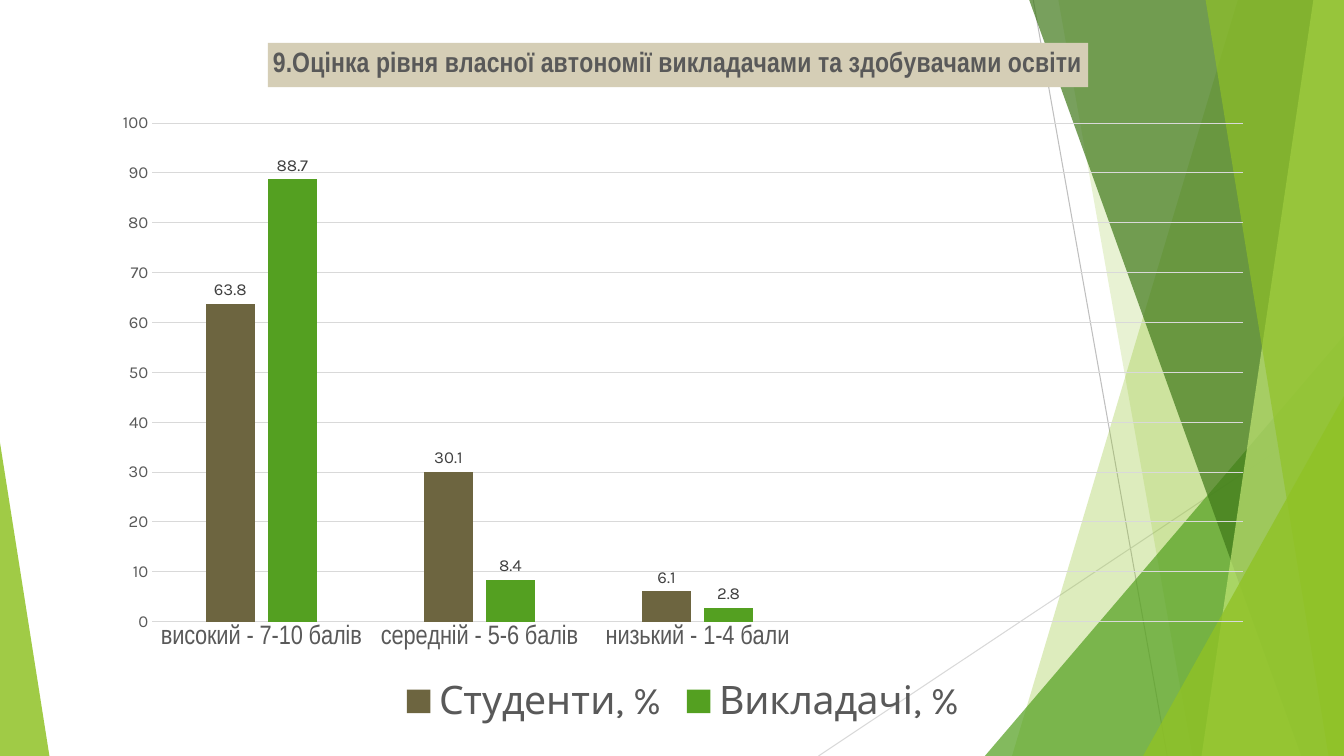
import lxml.etree
import pptx
import pptx.chart.data
import pptx.dml.color
import pptx.enum.chart
import pptx.enum.shapes
import pptx.oxml.ns
import pptx.util

qn = pptx.oxml.ns.qn
SHAPE = pptx.enum.shapes.MSO_SHAPE
CHART = pptx.enum.chart

THEME = {
    "lime": "90C226", "green": "54A021", "forest": "3F7819", "pale": "C0E474",
    "olive": "6D6540", "sand": "D5CEB6", "grid": "D9D9D9", "ray": "BFBFBF",
    "text": "595959", "value": "404040",
    "narrow": "Arial Narrow", "body": "Karla",
    "title_size": 20, "category_size": 19, "number_size": 12, "legend_size": 28,
    "hairline": 0.75,
}

# Facets from back to front, in percent of the slide.
# blade: left edge at top and bottom; corner: left, top, width, apex side
FACETS = [
    ("blade", (92.1, 75.3), "lime", 30),
    ("blade", (78.75, 88.72), "lime", 20),
    ("corner", (73.28, 44.4, 26.72, 1), "green", 72),
    ("blade", (76.58, 96.82), "forest", 70),
    ("blade", (97.72, 89.4), "pale", 70),
    ("blade", (89.7, 98.85), "lime", 65),
    ("corner", (85.05, 52.4, 14.95, 1), "lime", 80),
    ("corner", (0, 58.53, 3.68, 0), "lime", 85),
]
RAYS = [((76.88, 0), (86.85, 100), "ray"), ((100, 53.73), (60.9, 100), "grid")]
CHART_AREA = (7.43, 4.67, 86.78, 92.13)

CATEGORIES = ["високий - 7-10 балів", "середній - 5-6 балів", "низький - 1-4 бали", "", ""]
SERIES = [
    ("Студенти, %", (63.8, 30.1, 6.1, None, None), "olive"),
    ("Викладачі, %", (88.7, 8.4, 2.8, None, None), "green"),
]
TITLE = "9.Оцінка рівня власної автономії викладачами та здобувачами освіти"


def rgb(key):
    return pptx.dml.color.RGBColor.from_string(THEME[key])


def apply(target, values):
    for name, value in values.items():
        setattr(target, name, value)


def style_font(font, face, size, color, bold=False):
    apply(font, {"name": THEME[face], "size": pptx.util.Pt(THEME[size]), "bold": bold})
    font.color.rgb = rgb(color)


def style_line(line, color):
    line.width = pptx.util.Pt(THEME["hairline"])
    line.color.rgb = rgb(color)


def place(box, x, y):
    """Turn percent of a box into slide coordinates."""
    left, top, width, height = box
    return int(left + width * x / 100), int(top + height * y / 100)


def paint(shape, color, opacity):
    shape.shadow.inherit = False
    shape.line.fill.background()
    shape.fill.solid()
    shape.fill.fore_color.rgb = rgb(color)
    tint = shape.element.spPr.find(".//" + qn("a:srgbClr"))
    lxml.etree.SubElement(tint, qn("a:alpha")).set("val", str(opacity * 1000))


def set_layout(parent, index, shares):
    """Fix the place of a chart part by shares of the chart area."""
    for old in parent.findall(qn("c:layout")):
        parent.remove(old)
    layout = lxml.etree.Element(qn("c:layout"))
    parent.insert(index, layout)
    manual = lxml.etree.SubElement(layout, qn("c:manualLayout"))
    for tag, value in shares.items():
        lxml.etree.SubElement(manual, qn("c:" + tag)).set("val", str(value))


def add_facets(slide, box):
    # Thin rays
    for start, end, color in RAYS:
        ray = slide.shapes.add_connector(
            pptx.enum.shapes.MSO_CONNECTOR.STRAIGHT, *place(box, *start), *place(box, *end))
        style_line(ray.line, color)
        lxml.etree.SubElement(ray.element.spPr, qn("a:effectLst"))

    # Translucent blades and corners
    for kind, where, color, opacity in FACETS:
        if kind == "blade":
            top, bottom = where
            outline = slide.shapes.build_freeform(*place(box, top, 0))
            outline.add_line_segments(
                [place(box, x, y) for x, y in ((100, 0), (100, 100), (bottom, 100))])
            facet = outline.convert_to_shape()
        else:
            left, top, width, apex = where
            x, y = place(box, left, top)
            right, bottom = place(box, left + width, 100)
            facet = slide.shapes.add_shape(
                SHAPE.ISOSCELES_TRIANGLE, x, y, right - x, bottom - y)
            facet.adjustments[0] = apex
        paint(facet, color, opacity)


def add_autonomy_chart(slide, box):
    scores = pptx.chart.data.CategoryChartData(number_format="General")
    scores.categories = CATEGORIES
    for name, values, _ in SERIES:
        scores.add_series(name, values)
    chart = slide.shapes.add_chart(
        CHART.XL_CHART_TYPE.COLUMN_CLUSTERED, *box, scores).chart
    style_font(chart.font, "body", "number_size", "text")

    # Title on a sand band
    heading = chart.chart_title
    heading.text_frame.text = TITLE
    style_font(heading.text_frame.paragraphs[0].runs[0].font,
               "narrow", "title_size", "text", True)
    heading.format.fill.solid()
    heading.format.fill.fore_color.rgb = rgb("sand")
    set_layout(heading.element, 1, {"xMode": "edge", "yMode": "edge", "x": 0.144, "y": 0.011})

    # Plot and bars
    set_layout(chart.element.find(".//" + qn("c:plotArea")), 0, {
        "layoutTarget": "inner", "xMode": "edge", "yMode": "edge",
        "x": 0.045, "y": 0.126, "w": 0.935, "h": 0.716})
    bars = chart.plots[0]
    apply(bars, {"gap_width": 219, "overlap": -27, "vary_by_categories": False})
    for group, (_, _, color) in zip(bars.series, SERIES):
        group.format.fill.solid()
        group.format.fill.fore_color.rgb = rgb(color)
        apply(group.data_labels, {
            "show_value": True, "position": CHART.XL_LABEL_POSITION.OUTSIDE_END})
        style_font(group.data_labels.font, "body", "number_size", "value")

    # Axes
    levels, percents = chart.category_axis, chart.value_axis
    for axis in (levels, percents):
        apply(axis, {"major_tick_mark": CHART.XL_TICK_MARK.NONE,
                     "minor_tick_mark": CHART.XL_TICK_MARK.NONE})
    apply(percents, {"minimum_scale": 0, "maximum_scale": 100, "major_unit": 10,
                     "has_major_gridlines": True})
    style_line(levels.format.line, "grid")
    style_line(percents.major_gridlines.format.line, "grid")
    percents.format.line.fill.background()
    style_font(levels.tick_labels.font, "narrow", "category_size", "text")
    style_font(percents.tick_labels.font, "body", "number_size", "text")

    # Legend
    chart.has_legend = True
    apply(chart.legend, {"position": CHART.XL_LEGEND_POSITION.BOTTOM,
                         "include_in_layout": False})
    style_font(chart.legend.font, "body", "legend_size", "text")


def main():
    deck = pptx.Presentation()
    apply(deck, {"slide_width": pptx.util.Inches(13.33),
                 "slide_height": pptx.util.Inches(7.5)})
    slide = deck.slides.add_slide(deck.slide_layouts[6])
    page = (0, 0, deck.slide_width, deck.slide_height)
    add_facets(slide, page)
    left, top, width, height = CHART_AREA
    add_autonomy_chart(slide, place(page, left, top) + place(page, width, height))
    deck.save("out.pptx")


if __name__ == "__main__":
    main()
